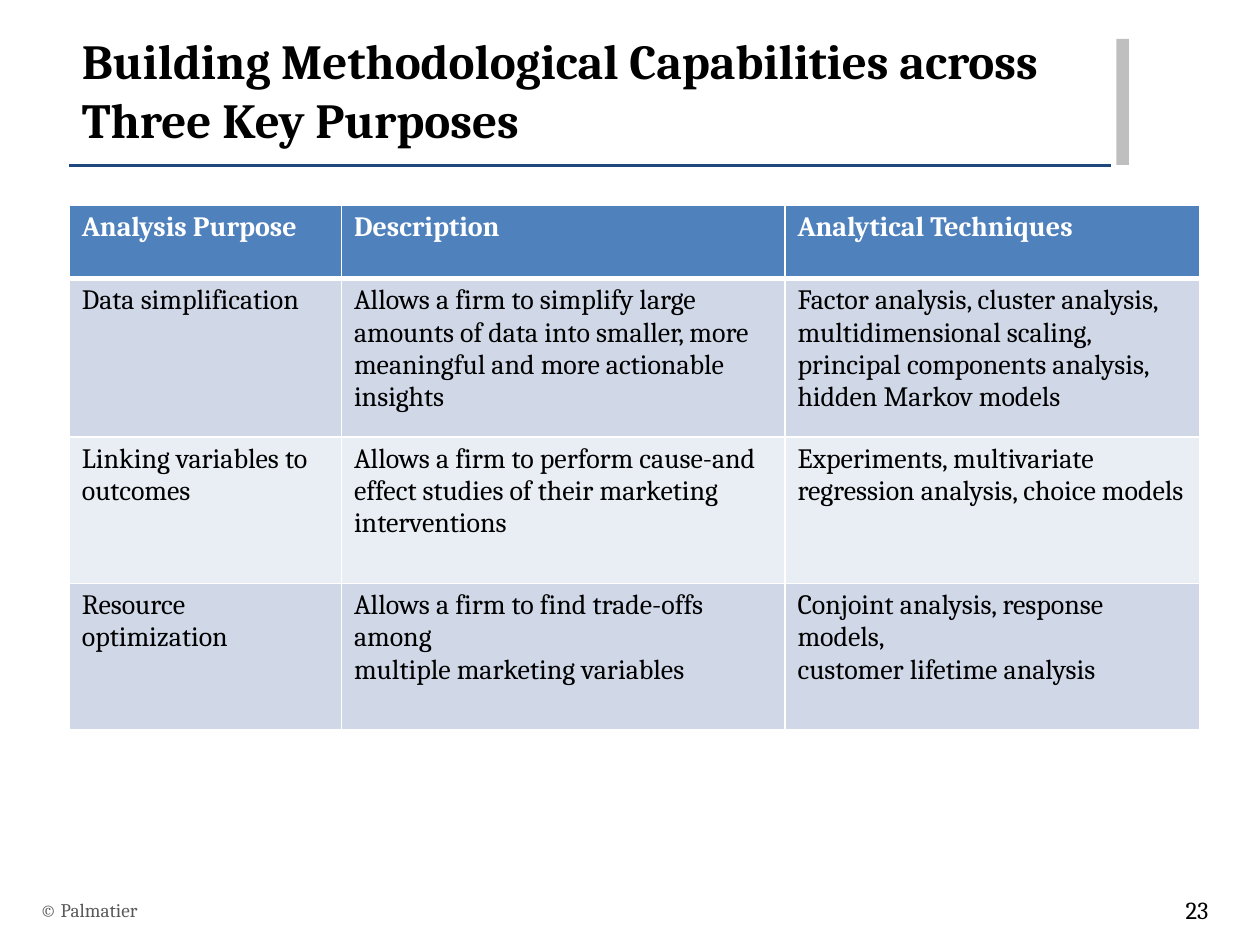
from typing import NamedTuple

from lxml.etree import SubElement
from pptx import Presentation
from pptx.dml.color import RGBColor
from pptx.enum.shapes import MSO_CONNECTOR, MSO_SHAPE
from pptx.enum.text import MSO_ANCHOR, MSO_AUTO_SIZE, PP_ALIGN
from pptx.oxml import parse_xml
from pptx.oxml.ns import nsdecls, qn
from pptx.util import Pt

FACE = "Cambria"
BLACK, WHITE = "000000", "FFFFFF"
HEAD, BANDS = "4F81BD", ("D0D8E8", "E9EDF4")


class Style(NamedTuple):
    size: float
    color: str = BLACK
    bold: bool = False
    align: PP_ALIGN = PP_ALIGN.LEFT


class Note(NamedTuple):
    text: str
    left: float
    width: float
    style: Style


NOTES = [
    Note("© Palmatier", 15.84, 482.4, Style(11, "595959")),
    Note("23", 653.76, 43.92, Style(14, align=PP_ALIGN.RIGHT)),
]
COLS = (155.52, 253.44, 236.88)
ROWS = (41.76, 90.72, 83.52, 83.52)
# Each cell is a tuple of paragraphs
CELLS = [
    [("Analysis Purpose",), ("Description",), ("Analytical Techniques",)],
    [("Data simplification",),
     ("Allows a firm to simplify large amounts of data into smaller, "
      "more meaningful and more actionable insights",),
     ("Factor analysis, cluster analysis, multidimensional scaling, "
      "principal components analysis, hidden Markov models",)],
    [("Linking variables to outcomes",),
     ("Allows a firm to perform cause-and effect studies of their "
      "marketing interventions",),
     ("Experiments, multivariate regression analysis, choice models",)],
    [("Resource optimization",),
     ("Allows a firm to find trade-offs among", "multiple marketing variables"),
     ("Conjoint analysis, response models,", "customer lifetime analysis")],
]


def tint(code: str) -> RGBColor:
    return RGBColor.from_string(code)


def write(frame, lines: tuple, style: Style) -> None:
    for i, line in enumerate(lines):
        para = frame.add_paragraph() if i else frame.paragraphs[0]
        para.alignment = style.align
        run = para.add_run()
        run.text = line
        font = run.font
        font.name, font.size, font.bold = FACE, Pt(style.size), style.bold
        font.color.rgb = tint(style.color)


def edge(cell, side: str, width: float) -> None:
    line = parse_xml(
        f'<a:ln{side} {nsdecls("a")} w="{Pt(width)}"><a:solidFill>'
        f'<a:srgbClr val="{WHITE}"/></a:solidFill></a:ln{side}>')
    cell._tc.get_or_add_tcPr().append(line)


def add_note(slide, note: Note) -> None:
    box = slide.shapes.add_textbox(
        Pt(note.left), Pt(505.44), Pt(note.width), Pt(28.8))
    frame = box.text_frame
    frame.word_wrap = True
    frame.vertical_anchor = MSO_ANCHOR.MIDDLE
    write(frame, (note.text,), note.style)


def add_grid(slide) -> None:
    table = slide.shapes.add_table(
        len(ROWS), len(COLS), Pt(39.6), Pt(117.36),
        Pt(sum(COLS)), Pt(sum(ROWS))).table
    for col, width in zip(table.columns, COLS):
        col.width = Pt(width)
    for r, (height, texts) in enumerate(zip(ROWS, CELLS)):
        table.rows[r].height = Pt(height)
        style = Style(16) if r else Style(16, WHITE, True)
        for c, lines in enumerate(texts):
            cell = table.cell(r, c)
            # The rule under the header is heavier
            widths = {"L": 1, "R": 1, "T": 3 if r == 1 else 1,
                      "B": 1 if r else 3}
            for side, width in widths.items():
                edge(cell, side, width)
            cell.fill.solid()
            cell.fill.fore_color.rgb = tint(BANDS[(r - 1) % 2] if r else HEAD)
            write(cell.text_frame, lines, style)


def add_trim(slide) -> None:
    rule = slide.shapes.add_connector(
        MSO_CONNECTOR.STRAIGHT, Pt(39.6), Pt(94.5), Pt(635.04), Pt(94.5))
    rule.line.color.rgb = tint("1F497D")
    rule.line.width = Pt(2)
    SubElement(rule._element.spPr, qn("a:effectLst"))
    bar = slide.shapes.add_shape(
        MSO_SHAPE.RECTANGLE, Pt(637.92), Pt(22.32), Pt(7.2), Pt(72))
    bar.shadow.inherit = False
    bar.fill.solid()
    bar.fill.fore_color.rgb = tint("BFBFBF")
    bar.line.fill.background()


def add_title(slide) -> None:
    title = slide.shapes.title
    title.left, title.top = Pt(39.6), Pt(13.68)
    title.width, title.height = Pt(594.72), Pt(63.36)
    frame = title.text_frame
    frame.word_wrap = True
    frame.auto_size = MSO_AUTO_SIZE.NONE
    frame.vertical_anchor = MSO_ANCHOR.TOP
    write(frame, ("Building Methodological Capabilities across "
                  "Three Key Purposes",), Style(28, bold=True))


def main() -> None:
    deck = Presentation()
    deck.slide_width, deck.slide_height = Pt(720), Pt(540)
    slide = deck.slides.add_slide(deck.slide_layouts[5])
    # Header
    add_trim(slide)
    add_title(slide)
    # Footer
    for note in NOTES:
        add_note(slide, note)
    # Body
    add_grid(slide)
    deck.save("out.pptx")


if __name__ == "__main__":
    main()
